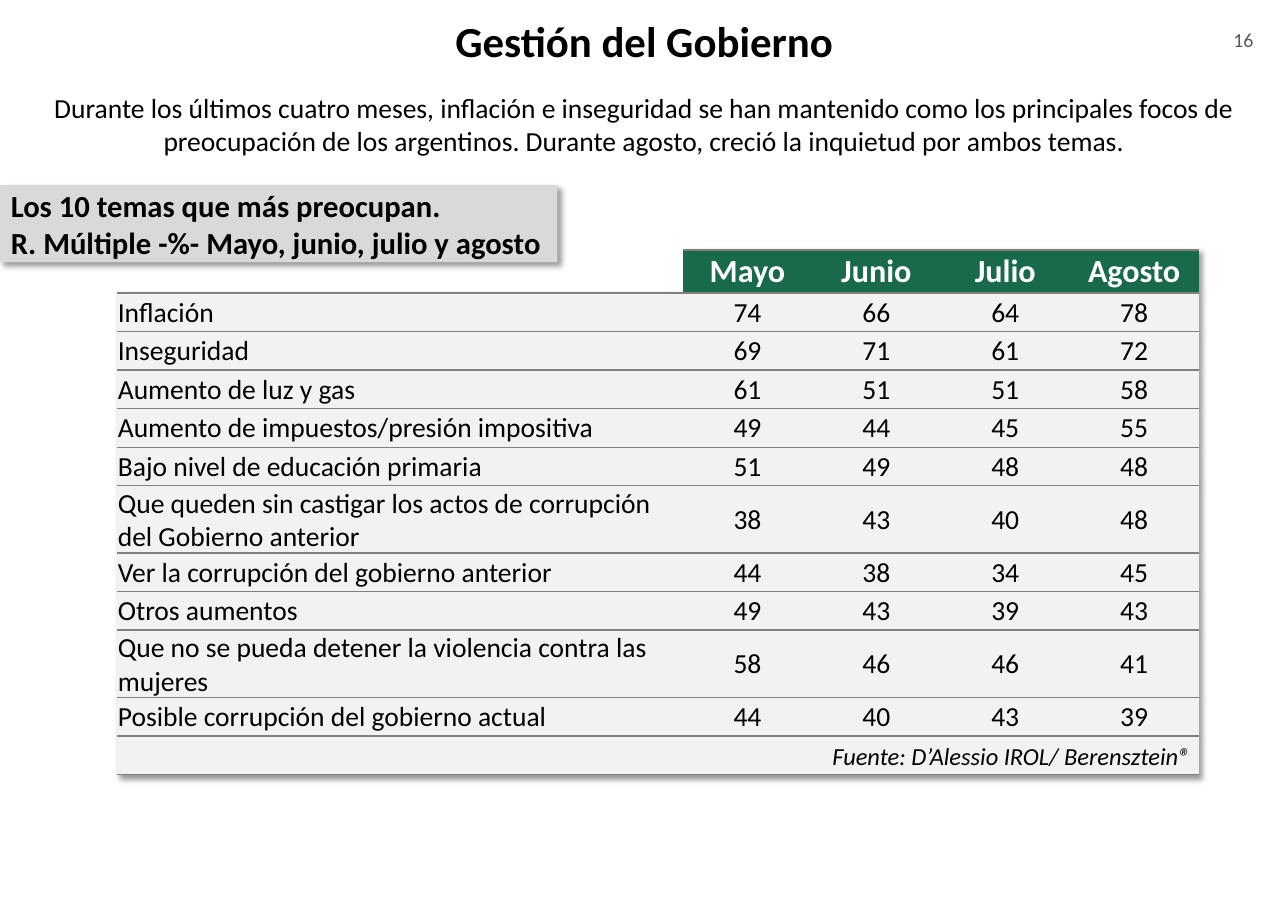
import dataclasses
import lxml.etree
import pptx
import pptx.dml.color
import pptx.enum.shapes
import pptx.enum.text
import pptx.oxml.ns
import pptx.util

Inches = pptx.util.Inches
Pt = pptx.util.Pt
Align = pptx.enum.text.PP_ALIGN
Anchor = pptx.enum.text.MSO_ANCHOR


@dataclasses.dataclass(frozen=True)
class Theme:
    font: str = "Calibri"
    ink: str = "000000"
    white: str = "FFFFFF"
    muted: str = "595959"
    green: str = "19694B"
    pale: str = "F2F2F2"
    grey: str = "D9D9D9"
    rule: str = "808080"
    title: int = 28
    head: int = 21
    label: int = 20
    body: int = 18
    source: int = 16
    page: int = 13


HEADS = ["", "Mayo", "Junio", "Julio", "Agosto"]
TOPICS = [
    ("Inflación", 74, 66, 64, 78),
    ("Inseguridad", 69, 71, 61, 72),
    ("Aumento de luz y gas", 61, 51, 51, 58),
    ("Aumento de impuestos/presión impositiva", 49, 44, 45, 55),
    ("Bajo nivel de educación primaria", 51, 49, 48, 48),
    ("Que queden sin castigar los actos de corrupción del Gobierno anterior", 38, 43, 40, 48),
    ("Ver la corrupción del gobierno anterior", 44, 38, 34, 45),
    ("Otros aumentos", 49, 43, 39, 43),
    ("Que no se pueda detener la violencia contra las mujeres", 58, 46, 46, 41),
    ("Posible corrupción del gobierno actual", 44, 40, 43, 39),
]
SOURCE = "Fuente: D’Alessio IROL/ Berensztein®"


def color(code):
    return pptx.dml.color.RGBColor.from_string(code)


def node(up, tag, **attrs):
    """Add a child element to an XML parent."""
    child = lxml.etree.SubElement(up, pptx.oxml.ns.qn(tag))
    for key, value in attrs.items():
        child.set(key, str(value))
    return child


def write(frame, text, *, font, size, ink, bold=False, slant=False,
          align=Align.LEFT, space=None):
    """Fill a text frame, one paragraph per line of text."""
    frame.word_wrap = True
    for i, line in enumerate(text.split("\n")):
        para = frame.paragraphs[0] if i == 0 else frame.add_paragraph()
        para.alignment = align
        para.line_spacing = space
        run = para.add_run() if line else para
        if line:
            run.text = line
        run.font.name = font
        run.font.size = Pt(size)
        run.font.bold = bold
        run.font.italic = slant
        run.font.color.rgb = color(ink)


def inset(item, sides):
    """Set left, top, right and bottom margins of a frame or cell."""
    left, top, right, base = map(Inches, sides)
    item.margin_left, item.margin_top = left, top
    item.margin_right, item.margin_bottom = right, base


def shade(props, place):
    """Insert a soft drop shadow among the properties."""
    effects = node(props, "a:effectLst")
    drop = node(effects, "a:outerShdw", blurRad=Pt(4), dist=Pt(3),
                dir=45 * 60000, algn="tl", rotWithShape=0)
    tint = node(drop, "a:srgbClr", val=Theme.ink)
    node(tint, "a:alpha", val=40000)
    props.insert(place, effects)


class Page:
    def __init__(self, slide, theme):
        self.slide = slide
        self.theme = theme

    def text(self, box, text, sides=(0.1, 0.05, 0.1, 0.05),
             anchor=Anchor.MIDDLE, grow=False, **form):
        frame = self.slide.shapes.add_textbox(*map(Inches, box)).text_frame
        write(frame, text, font=self.theme.font, align=Align.CENTER, **form)
        inset(frame, sides)
        frame.vertical_anchor = anchor
        if grow:
            frame.auto_size = pptx.enum.text.MSO_AUTO_SIZE.SHAPE_TO_FIT_TEXT

    def label(self, box, text, fill, **form):
        kind = pptx.enum.shapes.MSO_SHAPE.RECTANGLE
        shape = self.slide.shapes.add_shape(kind, *map(Inches, box))
        shape.fill.solid()
        shape.fill.fore_color.rgb = color(fill)
        shape.line.fill.background()
        props = shape._element.spPr
        shade(props, len(props))
        shape.text_frame.vertical_anchor = Anchor.MIDDLE
        write(shape.text_frame, text, font=self.theme.font, **form)

    def cell(self, cell, text, sides, fill=None, edges="TB", **form):
        props = cell._tc.get_or_add_tcPr()
        for side in "LRTB":
            line = node(props, "a:ln" + side, w=Pt(1))
            if side in edges:
                node(node(line, "a:solidFill"), "a:srgbClr", val=self.theme.rule)
            else:
                node(line, "a:noFill")
        if fill:
            cell.fill.solid()
            cell.fill.fore_color.rgb = color(fill)
        else:
            cell.fill.background()
        inset(cell, sides)
        cell.vertical_anchor = Anchor.MIDDLE
        write(cell.text_frame, text, font=self.theme.font, **form)

    def table(self, box, heads, rows, source):
        look = self.theme
        count = len(rows) + 2
        table = self.slide.shapes.add_table(count, len(heads), *map(Inches, box)).table
        table.first_row = table.horz_banding = False
        shade(table._tbl.tblPr, 0)
        for i, col in enumerate(table.columns):
            col.width = Inches(1.17 if i else 5.14)
        for i, row in enumerate(table.rows):
            row.height = Inches(0.35 if i else 0.39)

        # Month headings
        for i, name in enumerate(heads):
            self.cell(table.cell(0, i), name, (0.05, 0, 0.05, 0),
                      fill=look.green if name else None, edges="TB" if name else "B",
                      size=look.head, ink=look.white, bold=True, align=Align.CENTER)

        # Topics and their shares
        for r, row in enumerate(rows, 1):
            for c, value in enumerate(row):
                self.cell(table.cell(r, c), str(value), (0.01, 0.01, 0.01, 0),
                          fill=look.pale, size=look.body, ink=look.ink,
                          align=Align.CENTER if c else Align.LEFT)

        # Source line across the last row
        last = count - 1
        table.cell(last, 0).merge(table.cell(last, len(heads) - 1))
        for c in range(len(heads)):
            self.cell(table.cell(last, c), "" if c else source, (0.07, 0, 0.07, 0),
                      fill=look.pale, size=look.source, ink=look.ink, slant=True,
                      align=Align.RIGHT, space=1.15)


def main():
    deck = pptx.Presentation()
    deck.slide_width = Inches(11.69)
    deck.slide_height = Inches(8.27)
    look = Theme()
    page = Page(deck.slides.add_slide(deck.slide_layouts[6]), look)

    # Page number and summary
    page.text((10.84, 0.2, 0.89, 0.44), "16", anchor=Anchor.TOP,
              size=look.page, ink=look.muted)
    page.text((0, 0.77, 11.69, 0.71),
              "Durante los últimos cuatro meses, inflación e inseguridad se han "
              "mantenido como los principales focos de preocupación de los argentinos. "
              "Durante agosto, creció la inquietud por ambos temas.",
              grow=True, size=look.body, ink=look.ink)

    # Topic table with its label
    page.table((1.06, 2.27, 9.82, 4.24), HEADS, TOPICS, SOURCE)
    page.label((0, 1.68, 5.06, 0.7),
               "Los 10 temas que más preocupan.\n"
               "R. Múltiple -%- Mayo, junio, julio y agosto",
               look.grey, size=look.label, ink=look.ink, bold=True)

    # Title
    page.text((0, -0.1, 11.69, 0.94), "Gestión del Gobierno",
              sides=(0.11, 0.06, 0.11, 0.06),
              size=look.title, ink=look.ink, bold=True)

    deck.save("out.pptx")


if __name__ == "__main__":
    main()
